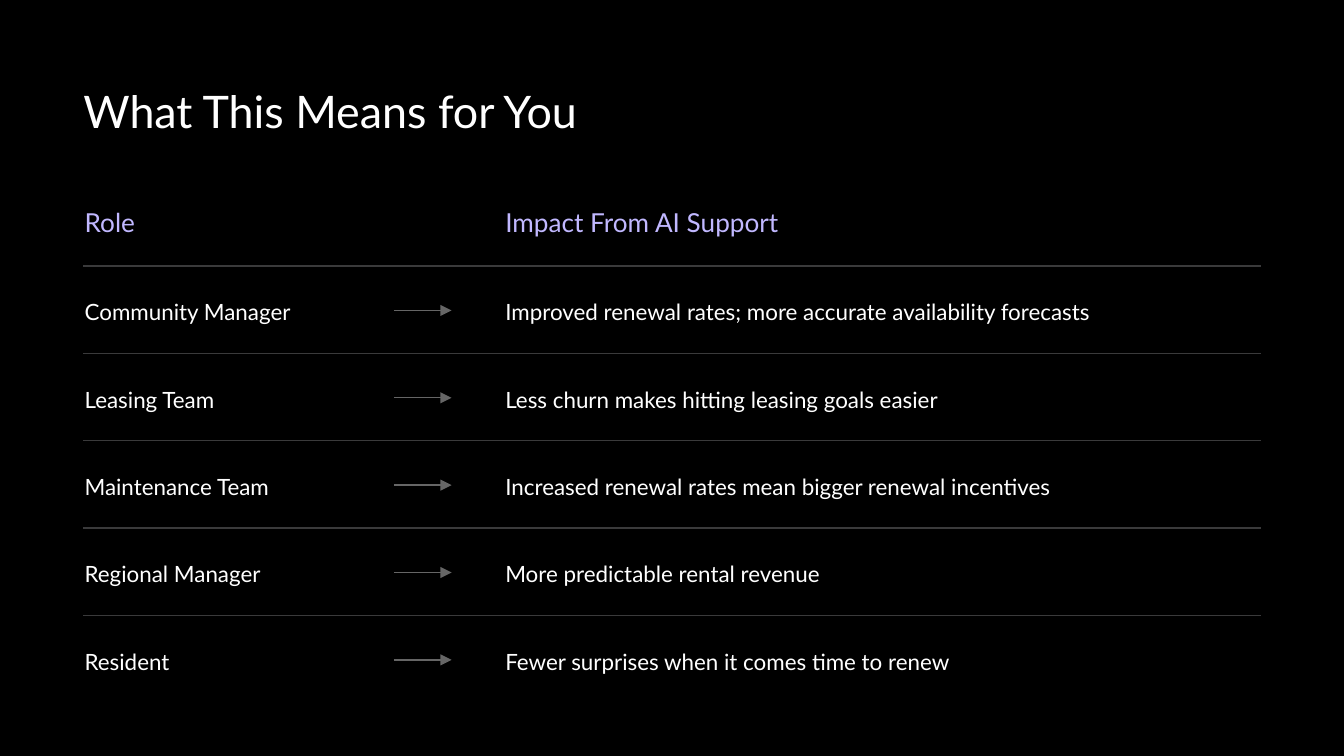
from dataclasses import dataclass

from lxml import etree
from pptx import Presentation
from pptx.dml.color import RGBColor
from pptx.enum import shapes, text
from pptx.oxml import ns
from pptx.util import Inches, Pt

COLOURS = {
    "background": "000000",
    "body": "FFFFFF",
    "heading": "C1B8FF",
    "divider": "3A3A3B",
    "arrow": "666666",
}
FONT = "Lato"
LEFT, RIGHT = 0.62, 9.38
ROLE_LEFT, IMPACT_LEFT = 0.63, 3.76
ARROW_LEFT, ARROW_RIGHT = 2.93, 3.36
HEADER_TOP, FIRST_ROW_TOP, ROW_PITCH = 1.5, 2.19, 0.65
DIVIDER_RISE, ARROW_DROP = 0.21, 0.12  # measured from the top of a row's text


@dataclass(frozen=True)
class RoleImpact:
    role: str
    impact: str
    role_width: float = 1.7
    impact_width: float = 5.22


@dataclass(frozen=True)
class TextStyle:
    size: int
    colour: str
    line_spacing: float = 1.15
    space_after: int = 12


TITLE = TextStyle(24, "body", 1.0, 0)
HEADING = TextStyle(14, "heading")
BODY = TextStyle(12, "body")

HEADER = RoleImpact("Role", "Impact From AI Support", impact_width=2.93)
ROWS = [
    RoleImpact("Community Manager",
               "Improved renewal rates; more accurate availability forecasts",
               role_width=2.07),
    RoleImpact("Leasing Team", "Less churn makes hitting leasing goals easier",
               role_width=1.88),
    RoleImpact("Maintenance Team",
               "Increased renewal rates mean bigger renewal incentives"),
    RoleImpact("Regional Manager", "More predictable rental revenue"),
    RoleImpact("Resident", "Fewer surprises when it comes time to renew"),
]


def colour(name: str) -> RGBColor:
    return RGBColor.from_string(COLOURS[name])


def write(box, words: str, style: TextStyle) -> None:
    frame = box.text_frame
    frame.text = words
    frame.word_wrap = True
    frame.auto_size = text.MSO_AUTO_SIZE.SHAPE_TO_FIT_TEXT
    frame.vertical_anchor = text.MSO_ANCHOR.TOP
    frame.margin_left = frame.margin_right = 0
    frame.margin_top = frame.margin_bottom = 0
    para = frame.paragraphs[0]
    para.alignment = text.PP_ALIGN.LEFT
    para.line_spacing = style.line_spacing
    para.space_before = Pt(0)
    para.space_after = Pt(style.space_after)
    para.font.name = FONT
    para.font.size = Pt(style.size)
    para.font.color.rgb = colour(style.colour)


def add_row(page, entry: RoleImpact, top: float, height: float,
            style: TextStyle) -> None:
    cells = [(ROLE_LEFT, entry.role_width, entry.role),
             (IMPACT_LEFT, entry.impact_width, entry.impact)]
    for left, width, words in cells:
        box = page.shapes.add_textbox(
            Inches(left), Inches(top), Inches(width), Inches(height))
        write(box, words, style)


def add_line(page, left: float, right: float, y: float, name: str,
             arrow: bool = False) -> None:
    line = page.shapes.add_connector(
        shapes.MSO_CONNECTOR.STRAIGHT,
        Inches(left), Inches(y), Inches(right), Inches(y))
    line.line.color.rgb = colour(name)
    line.line.width = Pt(0.75)
    properties = line._element.spPr
    if arrow:
        outline = properties.find(ns.qn("a:ln"))
        etree.SubElement(outline, ns.qn("a:tailEnd"), type="triangle")
    etree.SubElement(properties, ns.qn("a:effectLst"))


def main() -> None:
    deck = Presentation()
    deck.slide_width = Inches(10)
    deck.slide_height = deck.slide_width * 9 // 16
    page = deck.slides.add_slide(deck.slide_layouts[5])
    page.background.fill.solid()
    page.background.fill.fore_color.rgb = colour("background")

    # Title
    title = page.shapes.title
    title.left, title.top = Inches(LEFT), Inches(0.62)
    title.width, title.height = Inches(4.25), Inches(0.4)
    write(title, "What This Means for You", TITLE)

    # Column headings
    add_row(page, HEADER, HEADER_TOP, 0.24, HEADING)

    # One row per role: divider above, arrow from role to impact
    for index, entry in enumerate(ROWS):
        top = FIRST_ROW_TOP + index * ROW_PITCH
        add_row(page, entry, top, 0.2, BODY)
        add_line(page, LEFT, RIGHT, top - DIVIDER_RISE, "divider")
        add_line(page, ARROW_LEFT, ARROW_RIGHT, top + ARROW_DROP, "arrow",
                 arrow=True)

    deck.save("out.pptx")


if __name__ == "__main__":
    main()
